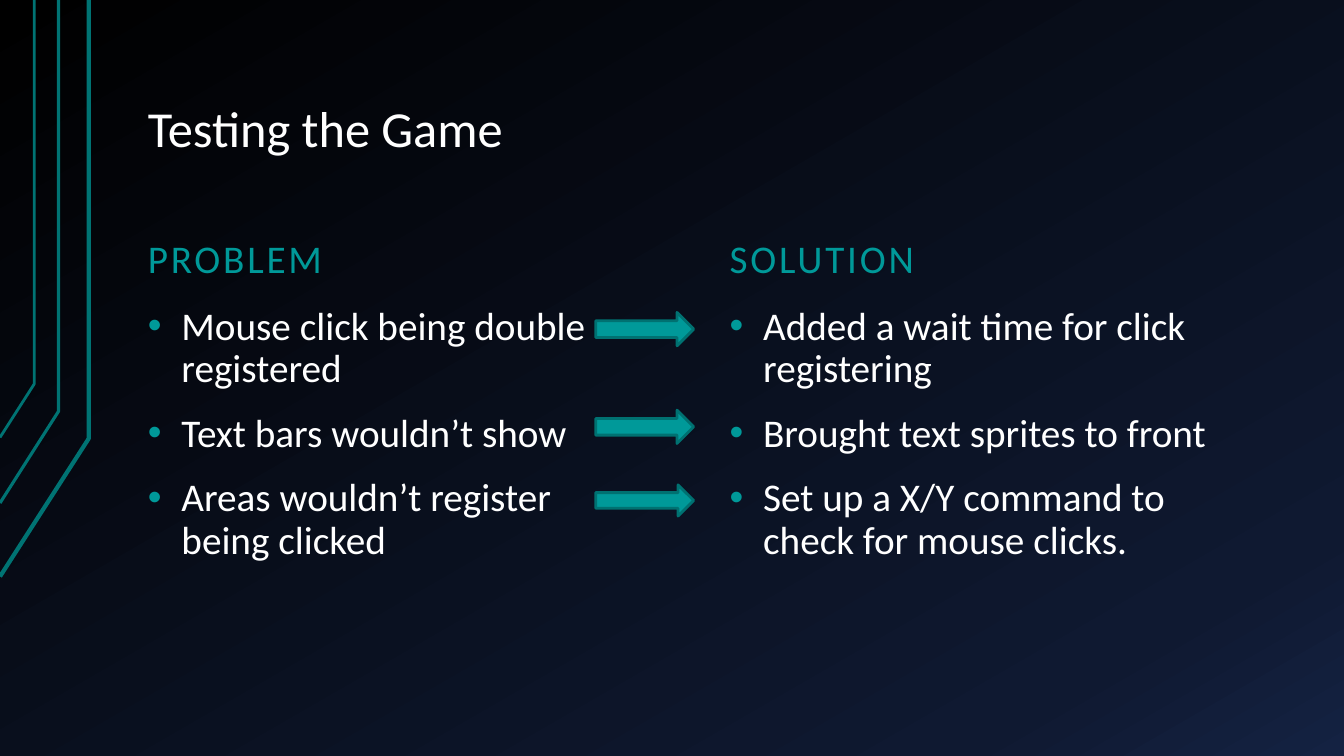
from copy import deepcopy
from dataclasses import dataclass

from lxml.etree import SubElement
from pptx import Presentation
from pptx.dml.color import RGBColor
from pptx.enum.shapes import MSO_SHAPE
from pptx.enum.text import MSO_ANCHOR, MSO_AUTO_SIZE, PP_ALIGN
from pptx.oxml.ns import qn
from pptx.util import Pt


@dataclass(frozen=True)
class Theme:
    font: str = "Calibri"
    title: int = 36
    body: int = 28
    white: str = "FFFFFF"
    teal: str = "009999"
    edge: str = "007171"
    stripe: str = "007373"
    back: tuple = ((0, "000000"), (0.85, "0F1931"), (1, "142242"))


THEME = Theme()
LEFT, RIGHT = 96, 511.5
HEAD_TOP, LIST_TOP = 134, 214
STRIPES = ((63.4, 313.2, 411.8, 3), (41.8, 293.8, 359.3, 2.25),
           (24.5, 274.3, 312.5, 2))
ARROWS = ((223.2, 23.8), (293, 23.8), (346.3, 22.3))
FAULTS = ("Mouse click being double registered", "Text bars wouldn’t show",
          "Areas wouldn’t register being clicked")
FIXES = ("Added a wait time for click registering",
         "Brought text sprites to front",
         "Set up a X/Y command to check for mouse clicks.")


def rgb(code):
    return RGBColor.from_string(code)


def paint(slide):
    """Fill the slide background with the three-stop gradient."""
    fill = slide.background.fill
    fill.gradient()
    fill.gradient_angle = 300
    first = slide.background._cSld.find(".//" + qn("a:gs"))
    first.addnext(deepcopy(first))
    for stop, (place, code) in zip(fill.gradient_stops, THEME.back):
        stop.position = place
        stop.color.rgb = rgb(code)


def stripes(slide):
    for x, bend, foot, width in STRIPES:
        form = slide.shapes.build_freeform(Pt(0), Pt(foot))
        form.add_line_segments([(Pt(x), Pt(bend)), (Pt(x), Pt(0))],
                               close=False)
        line = form.convert_to_shape()
        line.shadow.inherit = False
        line.fill.background()
        line.line.color.rgb = rgb(THEME.stripe)
        line.line.width = Pt(width)


def set_frame(shape, anchor):
    frame = shape.text_frame
    frame.word_wrap = True
    frame.auto_size = MSO_AUTO_SIZE.NONE
    frame.vertical_anchor = anchor
    frame.margin_left = frame.margin_right = Pt(9.6)
    frame.margin_top = frame.margin_bottom = Pt(4.8)
    return frame


def write(para, text, size, color):
    para.alignment = PP_ALIGN.LEFT
    para.line_spacing = 0.9
    run = para.add_run()
    run.text = text
    run.font.name = THEME.font
    run.font.size = Pt(size)
    run.font.color.rgb = rgb(color)
    return run


def title(slide, text, x, y, w, h):
    shape = slide.shapes.title
    shape.left, shape.top, shape.width, shape.height = map(Pt, (x, y, w, h))
    frame = set_frame(shape, MSO_ANCHOR.BOTTOM)
    write(frame.paragraphs[0], text, THEME.title, THEME.white)


def head(slide, text, x, y, w, h):
    box = slide.shapes.add_textbox(*map(Pt, (x, y, w, h)))
    frame = set_frame(box, MSO_ANCHOR.BOTTOM)
    run = write(frame.paragraphs[0], text, THEME.body, THEME.teal)
    run.font._element.set("spc", "200")


def bullet(para):
    props = para._p.get_or_add_pPr()
    props.set("marL", str(Pt(24)))
    props.set("indent", str(Pt(-24)))
    color = SubElement(props, qn("a:buClr"))
    SubElement(color, qn("a:srgbClr")).set("val", THEME.teal)
    SubElement(props, qn("a:buFont")).set("typeface", "Arial")
    SubElement(props, qn("a:buChar")).set("char", "•")


def points(slide, items, x, y, w, h):
    box = slide.shapes.add_textbox(*map(Pt, (x, y, w, h)))
    frame = set_frame(box, MSO_ANCHOR.TOP)
    for i, item in enumerate(items):
        para = frame.add_paragraph() if i else frame.paragraphs[0]
        write(para, item, THEME.body, THEME.white)
        para.space_before = Pt(16)
        bullet(para)


def column(slide, name, items, x, width):
    head(slide, name, x, HEAD_TOP, 400, 72)
    points(slide, items, x, LIST_TOP, width, 272)


def arrows(slide, x, w):
    for y, h in ARROWS:
        arrow = slide.shapes.add_shape(MSO_SHAPE.RIGHT_ARROW,
                                       *map(Pt, (x, y, w, h)))
        arrow.shadow.inherit = False
        arrow.fill.solid()
        arrow.fill.fore_color.rgb = rgb(THEME.teal)
        arrow.line.color.rgb = rgb(THEME.edge)
        arrow.line.width = Pt(2)


def main():
    deck = Presentation()
    deck.slide_width, deck.slide_height = Pt(960), Pt(540)
    slide = deck.slides.add_slide(deck.slide_layouts[5])
    paint(slide)
    stripes(slide)
    title(slide, "Testing the Game", LEFT, 21.6, 816, 96.5)
    column(slide, "PROBLEM", FAULTS, LEFT, 336)
    column(slide, "SOLUTION", FIXES, RIGHT, 400)
    arrows(slide, 425.5, 70)
    deck.save("out.pptx")


if __name__ == "__main__":
    main()
